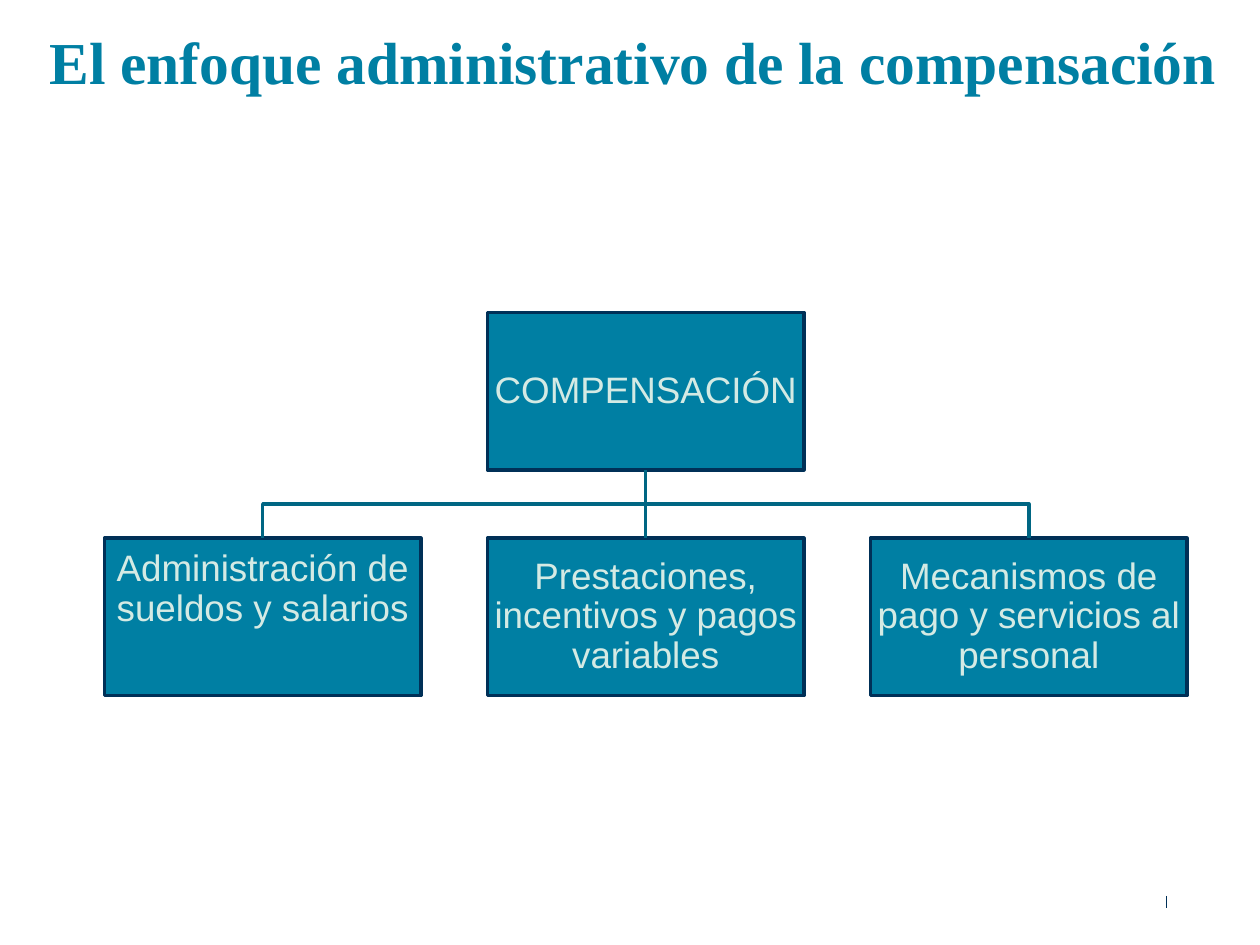
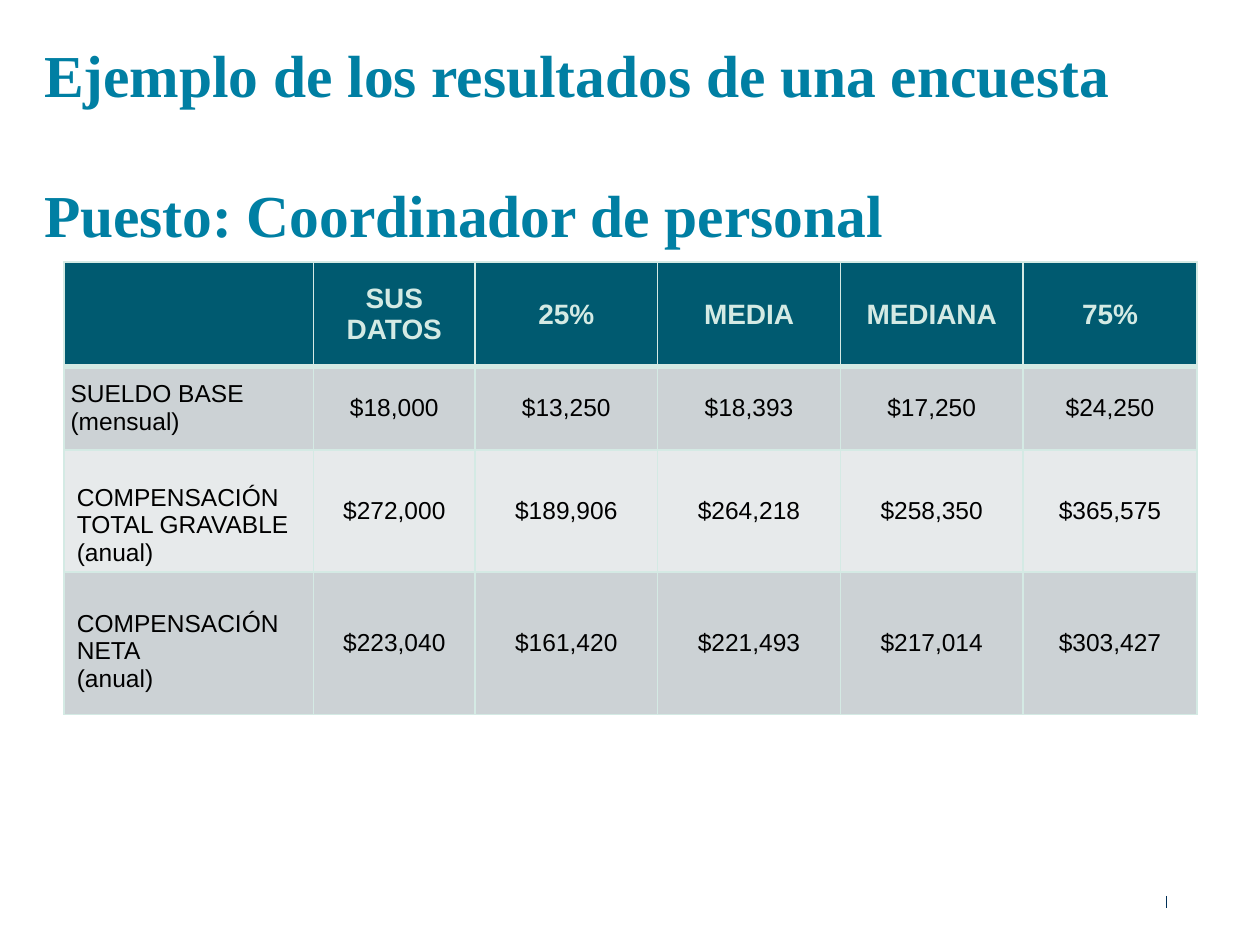
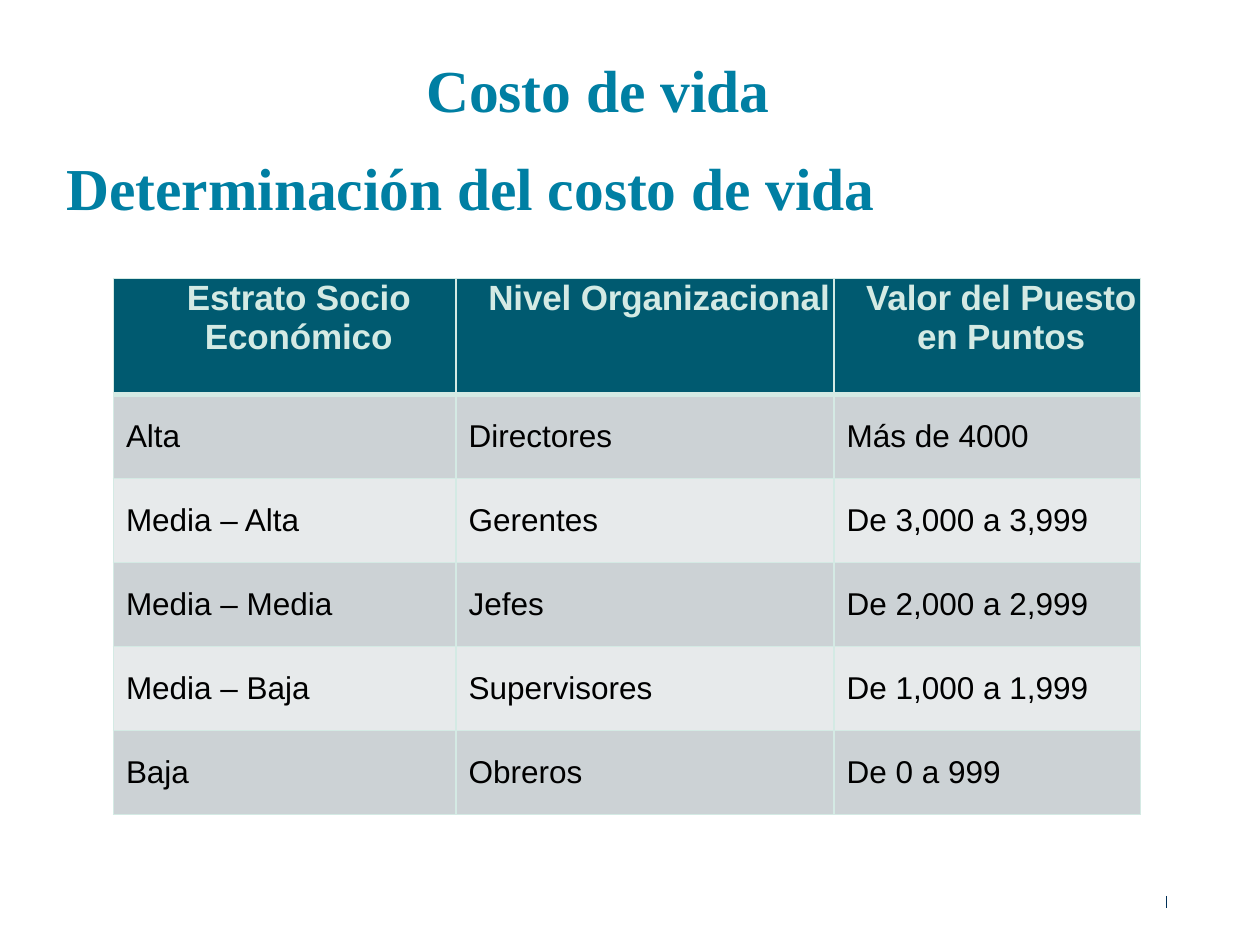
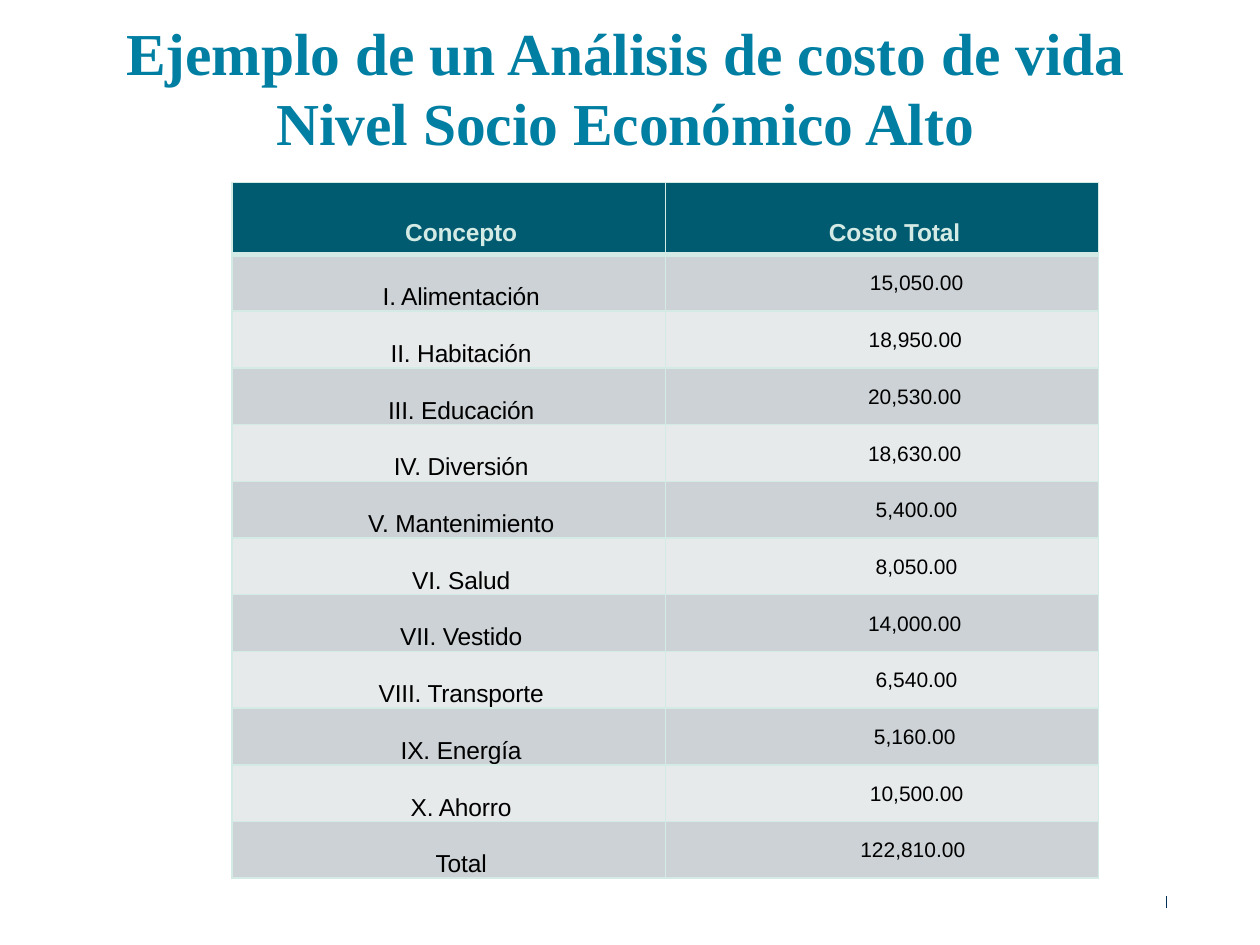
"""Build four slides on compensation: a chart of its parts, a pay survey and the cost of living."""
from dataclasses import dataclass, replace

from lxml import etree
from pptx import Presentation
from pptx import util as u
from pptx.dml.color import RGBColor
from pptx.enum import shapes, text
from pptx.oxml import ns

TEAL, DEEP_TEAL, LINK_TEAL, NAVY = "007FA3", "005A70", "006683", "003057"
MINT, BLACK, GREY, PALE_GREY = "D4EAE4", "000000", "CCD2D5", "E7EAEB"
SANS, SERIF = "Arial", "Times New Roman"
LEFT, CENTER = text.PP_ALIGN.LEFT, text.PP_ALIGN.CENTER
TOP, MIDDLE = text.MSO_ANCHOR.TOP, text.MSO_ANCHOR.MIDDLE
COLUMNS, ROWS = 100, 75


def rgb(value):
    return RGBColor.from_string(value)


@dataclass(frozen=True)
class Look:
    size: float
    color: str = BLACK
    font: str = SANS
    bold: bool = False
    align: int = LEFT
    anchor: int = MIDDLE
    margins: tuple = (0, 0, 0, 0)
    indent: float = 0
    line_spacing: object = None
    tracking: float = 0


HEADING = Look(34, TEAL, SERIF, True, anchor=TOP, line_spacing=u.Pt(40))
CENTERED_HEADING = replace(HEADING, align=CENTER)
BOX = Look(21, MINT, align=CENTER, margins=(0.1,) * 4, line_spacing=0.9)


class Deck:
    def __init__(self):
        self.prs = Presentation()
        self.prs.slide_width, self.prs.slide_height = u.Inches(10), u.Inches(7.5)
        self.slide = None

    def col(self, count):
        return u.Emu(round(self.prs.slide_width * count / COLUMNS))

    def row(self, count):
        return u.Emu(round(self.prs.slide_height * count / ROWS))

    def place(self, left, top, width, height):
        return self.col(left), self.row(top), self.col(width), self.row(height)

    def new_slide(self, heading, place, look=CENTERED_HEADING, gap=0):
        self.slide = self.prs.slides.add_slide(self.prs.slide_layouts[5])
        title = self.slide.shapes.title
        title.left, title.top, title.width, title.height = self.place(*place)
        self.fill_text(title.text_frame, heading, look)
        for paragraph in title.text_frame.paragraphs[1:]:
            paragraph.space_before = u.Pt(gap)
        self.line((92.6, 71.1), (92.6, 72.1), NAVY, 0.5)

    def fill_text(self, frame, words, look):
        frame.text = words
        frame.word_wrap = True
        frame.auto_size = text.MSO_AUTO_SIZE.NONE
        frame.vertical_anchor = look.anchor
        (frame.margin_left, frame.margin_top,
         frame.margin_right, frame.margin_bottom) = map(self.col, look.margins)
        self.style(frame.paragraphs, look)

    def style(self, paragraphs, look):
        for paragraph in paragraphs:
            paragraph.alignment = look.align
            paragraph.line_spacing = look.line_spacing
            if look.indent:
                props = paragraph._p.get_or_add_pPr()
                props.set("marL", str(self.col(look.indent)))
                props.set("indent", "0")
            for run in paragraph.runs:
                run.font.size, run.font.name = u.Pt(look.size), look.font
                run.font.bold = look.bold
                run.font.color.rgb = rgb(look.color)
                if look.tracking:
                    run._r.get_or_add_rPr().set("spc", str(round(look.tracking * 100)))

    def label(self, words, place, look):
        frame = self.slide.shapes.add_textbox(*self.place(*place)).text_frame
        self.fill_text(frame, words, look)

    def box(self, words, place, look=BOX):
        box = self.slide.shapes.add_shape(shapes.MSO_SHAPE.RECTANGLE, *self.place(*place))
        box.shadow.inherit = False
        box.fill.solid()
        box.fill.fore_color.rgb = rgb(TEAL)
        box.line.color.rgb, box.line.width = rgb(NAVY), u.Pt(2)
        self.fill_text(box.text_frame, words, look)
        return box

    def line(self, start, end, color, weight):
        line = self.slide.shapes.add_connector(
            shapes.MSO_CONNECTOR.STRAIGHT,
            self.col(start[0]), self.row(start[1]), self.col(end[0]), self.row(end[1]))
        line.line.color.rgb, line.line.width = rgb(color), u.Pt(weight)
        etree.SubElement(line._element.spPr, ns.qn("a:effectLst"))
        return line

    def link(self, parent, child):
        start_x, end_x = (box.left + box.width // 2 for box in (parent, child))
        start_y, end_y = parent.top + parent.height, child.top
        if start_x == end_x:
            stem = self.line((0, 0), (0, 0), LINK_TEAL, 2)
            stem.begin_connect(parent, 2)
            stem.end_connect(child, 0)
            return
        middle_y = (start_y + end_y) // 2
        builder = self.slide.shapes.build_freeform(start_x, start_y)
        builder.add_line_segments(
            [(start_x, middle_y), (end_x, middle_y), (end_x, end_y)], close=False)
        bracket = builder.convert_to_shape()
        bracket.shadow.inherit = False
        bracket.fill.background()
        bracket.line.color.rgb, bracket.line.width = rgb(LINK_TEAL), u.Pt(2)

    def border(self, cell, top, bottom):
        props = cell._tc.get_or_add_tcPr()
        for side, weight in zip(("lnL", "lnR", "lnT", "lnB"), (1, 1, top, bottom)):
            edge = etree.SubElement(props, ns.qn(f"a:{side}"), w=str(u.Pt(weight)))
            fill = etree.SubElement(edge, ns.qn("a:solidFill"))
            etree.SubElement(fill, ns.qn("a:srgbClr"), val=MINT)

    def table(self, left, top, widths, heights, rows, look_at):
        place = self.place(left, top, sum(widths), sum(heights))
        table = self.slide.shapes.add_table(len(rows), len(widths), *place).table
        table.horz_banding = False
        for column, width in zip(table.columns, widths):
            column.width = self.col(width)
        for r, (row, height) in enumerate(zip(rows, heights)):
            table.rows[r].height = self.row(height)
            for c, words in enumerate(row):
                cell, look = table.cell(r, c), look_at(r, c)
                self.border(cell, 3 if r == 1 else 1, 3 if r == 0 else 1)
                cell.fill.solid()
                cell.fill.fore_color.rgb = rgb(
                    DEEP_TEAL if r == 0 else GREY if r % 2 else PALE_GREY)
                cell.text_frame.text = words
                cell.vertical_anchor = look.anchor
                (cell.margin_left, cell.margin_top,
                 cell.margin_right, cell.margin_bottom) = map(self.col, look.margins)
                self.style(cell.text_frame.paragraphs, look)


def compensation_parts(deck):
    deck.new_slide("El enfoque administrativo de la compensación", (3.2, 2.1, 94.1, 13.5))
    width, height, step, first = 25.1, 12.5, 30.4, 8.3
    parent = deck.box("COMPENSACIÓN", (first + step, 24.8, width, height))
    parts = ("Administración de sueldos y salarios",
             "Prestaciones, incentivos y pagos variables",
             "Mecanismos de pago y servicios al personal")
    raised = replace(BOX, margins=(0.1, 0.1, 0.1, 4.4))
    for i, part in enumerate(parts):
        child = deck.box(part, (first + i * step, 42.7, width, height),
                         BOX if i else raised)
        deck.link(parent, child)


def pay_survey(deck):
    deck.new_slide("Ejemplo de los resultados de una encuesta\nPuesto: Coordinador de personal",
                   (3.5, 3.1, 95, 7.2), HEADING, gap=40)
    header = Look(16, MINT, bold=True, align=CENTER, margins=(0.5, 0, 0.5, 0))
    amount = replace(header, size=14, color=BLACK, bold=False)
    concepts = {1: replace(amount, align=LEFT),
                2: Look(14, anchor=TOP, margins=(1, 2.7, 1, 0.3)),
                3: Look(14, anchor=TOP, margins=(1, 3, 1, 0.5))}
    rows = (
        ("", "SUS DATOS", "25%", "MEDIA", "MEDIANA", "75%"),
        ("SUELDO BASE\n(mensual)", "$18,000", "$13,250", "$18,393", "$17,250", "$24,250"),
        ("COMPENSACIÓN TOTAL GRAVABLE\n(anual)",
         "$272,000", "$189,906", "$264,218", "$258,350", "$365,575"),
        ("COMPENSACIÓN\nNETA\n(anual)",
         "$223,040", "$161,420", "$221,493", "$217,014", "$303,427"),
    )
    deck.table(5.1, 20.8, (19.8, 12.8, 14.5, 14.5, 14.5, 13.8), (8.3, 6.6, 9.7, 11.3), rows,
               lambda r, c: header if r == 0 else amount if c else concepts[r])


def living_cost_levels(deck):
    deck.new_slide("Costo de vida", (4.3, 4.3, 86.3, 7.2))
    deck.label("Determinación del costo de vida", (4.3, 11.6, 95, 5.5),
               replace(HEADING, margins=(1, 0.5, 1, 0.5)))
    header = Look(20, MINT, bold=True, align=CENTER, anchor=TOP,
                  margins=(0.5, 0, 0.3, 0), indent=2, tracking=-0.1)
    body = Look(18, margins=(1, 0.5, 1, 0.5))
    rows = (
        ("Estrato Socio Económico", "Nivel Organizacional", "Valor del Puesto en Puntos"),
        ("Alta", "Directores", "Más de 4000"),
        ("Media – Alta", "Gerentes", "De 3,000 a 3,999"),
        ("Media – Media", "Jefes", "De 2,000 a 2,999"),
        ("Media – Baja", "Supervisores", "De 1,000 a 1,999"),
        ("Baja", "Obreros", "De 0 a 999"),
    )
    deck.table(9, 22.1, (27.2, 30, 24.3), (9.2,) + (6.67,) * 5, rows,
               lambda r, c: body if r else header)


def living_cost_example(deck):
    deck.new_slide("Ejemplo de un Análisis de costo de vida\nNivel Socio Económico Alto",
                   (4.3, 1.4, 90.7, 10.1))
    concept = Look(14, align=CENTER, margins=(0.1, 0.1, 0.1, 0), indent=2,
                   line_spacing=2.0, tracking=-0.1)
    header = replace(concept, color=MINT, bold=True)
    cost = Look(12, align=CENTER, line_spacing=1.07)
    rows = (
        ("Concepto", "Costo Total"),
        ("I. Alimentación", "15,050.00"),
        ("II. Habitación", "18,950.00"),
        ("III. Educación", "20,530.00"),
        ("IV. Diversión", "18,630.00"),
        ("V. Mantenimiento", "5,400.00"),
        ("VI. Salud", "8,050.00"),
        ("VII. Vestido", "14,000.00"),
        ("VIII. Transporte", "6,540.00"),
        ("IX. Energía", "5,160.00"),
        ("X. Ahorro", "10,500.00"),
        ("Total", "122,810.00"),
    )
    cost_indents = (0, 5.5, 5.3, 5.2, 5.2, 5.5, 5.5, 5.2, 5.5, 5.2, 5.5, 4.9)

    def look_at(r, c):
        if r == 0:
            return header
        return replace(cost, indent=cost_indents[r]) if c else concept

    deck.table(18.4, 14.5, (34.4, 34.4), (5.7,) + (4.5,) * 11, rows, look_at)


def main():
    deck = Deck()
    for build in (compensation_parts, pay_survey, living_cost_levels, living_cost_example):
        build(deck)
    deck.prs.save("out.pptx")


if __name__ == "__main__":
    main()
